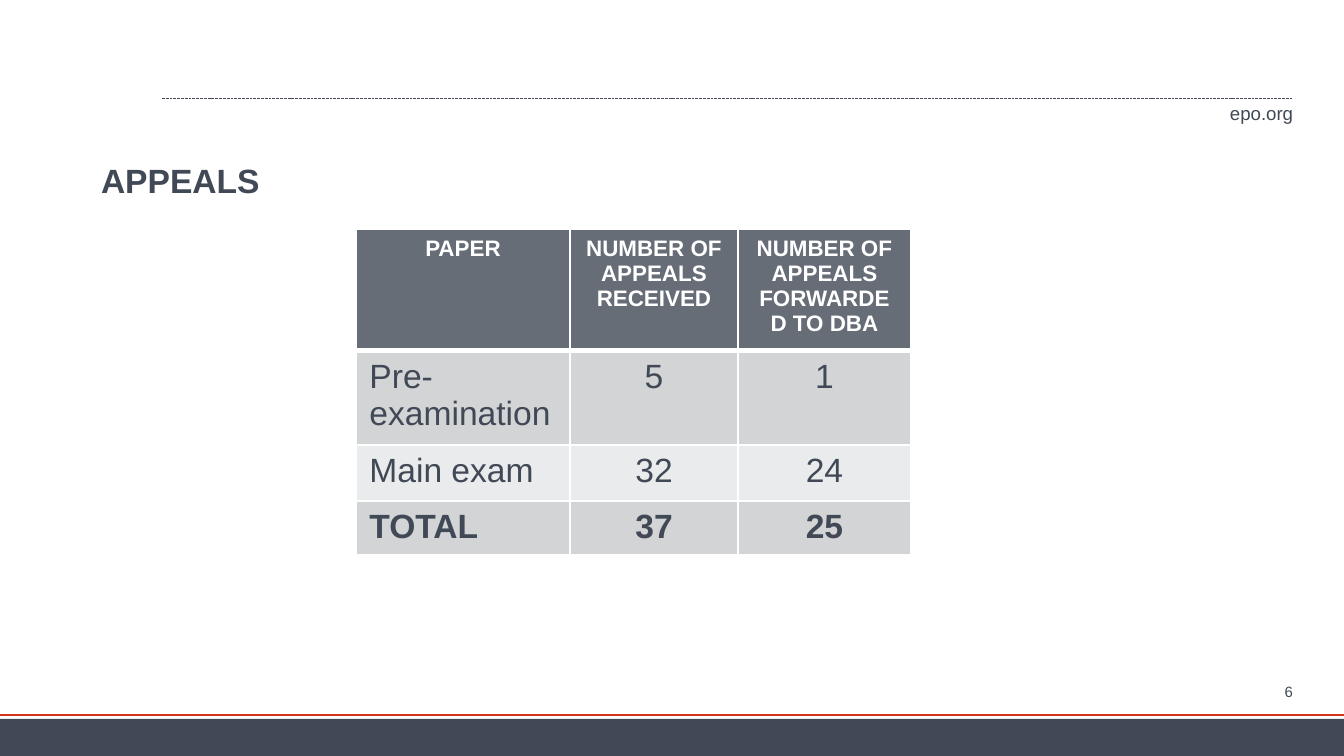
import pptx
import pptx.util
import pptx.dml.color
import pptx.enum.dml
import pptx.enum.shapes
import pptx.enum.text
import pptx.oxml.ns
import lxml.etree
import dataclasses


@dataclasses.dataclass
class Theme:
    font: str = "Arial"
    ink: str = "404955"
    accent: str = "D93317"
    white: str = "FFFFFF"
    header: str = "666D77"
    bands: tuple = ("D3D4D6", "EAEBEC")
    body: int = 18
    head: int = 12
    site: int = 10
    small: int = 8


theme = Theme()
PX = 914400 / 134.4
RGB = pptx.dml.color.RGBColor.from_string
ALIGN = pptx.enum.text.PP_ALIGN
ANCHOR = pptx.enum.text.MSO_ANCHOR
qn = pptx.oxml.ns.qn


def px(*values):
    return [round(v * PX) for v in values]


def write(tf, text, size, color, align, bold=False):
    tf.text = text
    p = tf.paragraphs[0]
    p.alignment = align
    font = p.runs[0].font
    font.name, font.size, font.bold = theme.font, pptx.util.Pt(size), bold
    font.color.rgb = RGB(color)


prs = pptx.Presentation()
prs.slide_width, prs.slide_height = px(1344, 756)
s = prs.slides.add_slide(prs.slide_layouts[6])

# Footer bar
bar = s.shapes.add_shape(pptx.enum.shapes.MSO_SHAPE.RECTANGLE, *px(0, 719, 1344, 37))
bar.shadow.inherit = False
bar.fill.solid()
bar.fill.fore_color.rgb = RGB(theme.ink)
bar.line.fill.background()

# Header rule and footer rule
for left, right, y, color, width, dash in (
    (162, 1293, 99, theme.ink, 0.5, pptx.enum.dml.MSO_LINE.SQUARE_DOT),
    (0, 1344, 715, theme.accent, 1.5, None),
):
    rule = s.shapes.add_connector(
        pptx.enum.shapes.MSO_CONNECTOR.STRAIGHT, *px(left, y, right, y))
    rule.line.color.rgb = RGB(color)
    rule.line.width = pptx.util.Pt(width)
    rule.line.dash_style = dash
    lxml.etree.SubElement(rule._element.spPr, qn("a:effectLst"))

# Site address, title and page number
for text, box, size, align, anchor, bold, wrap in (
    ("epo.org", (1230, 101, 63, 23), theme.site, ALIGN.RIGHT, ANCHOR.MIDDLE, False, False),
    ("APPEALS", (101, 118, 1192, 82), theme.body, ALIGN.LEFT, ANCHOR.BOTTOM, True, True),
    ("6", (1214, 683, 79, 17), theme.small, ALIGN.RIGHT, ANCHOR.MIDDLE, False, True),
):
    tf = s.shapes.add_textbox(*px(*box)).text_frame
    tf.margin_left = tf.margin_top = tf.margin_right = tf.margin_bottom = 0
    tf.word_wrap = wrap
    tf.vertical_anchor = anchor
    write(tf, text, size, theme.ink, align, bold)

# Appeals table
rows = (
    ("PAPER", "NUMBER OF APPEALS RECEIVED", "NUMBER OF APPEALS FORWARDED TO DBA"),
    ("Pre-examination", "5", "1"),
    ("Main exam", "32", "24"),
    ("TOTAL", "37", "25"),
)
table = s.shapes.add_table(len(rows), len(rows[0]), *px(356, 229, 555, 298)).table
for column, width in zip(table.columns, px(214, 168, 173)):
    column.width = width
for row, height in zip(table.rows, px(122, 75, 56, 45)):
    row.height = height

for i, texts in enumerate(rows):
    is_head = i == 0
    for j, text in enumerate(texts):
        cell = table.cell(i, j)
        write(
            cell.text_frame, text,
            theme.head if is_head else theme.body,
            theme.white if is_head else theme.ink,
            ALIGN.CENTER if is_head or j else ALIGN.LEFT,
            is_head or i == len(rows) - 1,
        )
        # Borders come before the fill in the cell properties
        tcPr = cell._tc.get_or_add_tcPr()
        for side in "LRTB":
            thick = (is_head and side == "B") or (i == 1 and side == "T")
            ln = lxml.etree.SubElement(
                tcPr, qn(f"a:ln{side}"), w=str(pptx.util.Pt(3 if thick else 1)))
            fill = lxml.etree.SubElement(ln, qn("a:solidFill"))
            lxml.etree.SubElement(fill, qn("a:srgbClr"), val=theme.white)
        cell.fill.solid()
        cell.fill.fore_color.rgb = RGB(theme.header if is_head else theme.bands[(i - 1) % 2])

prs.save("out.pptx")
